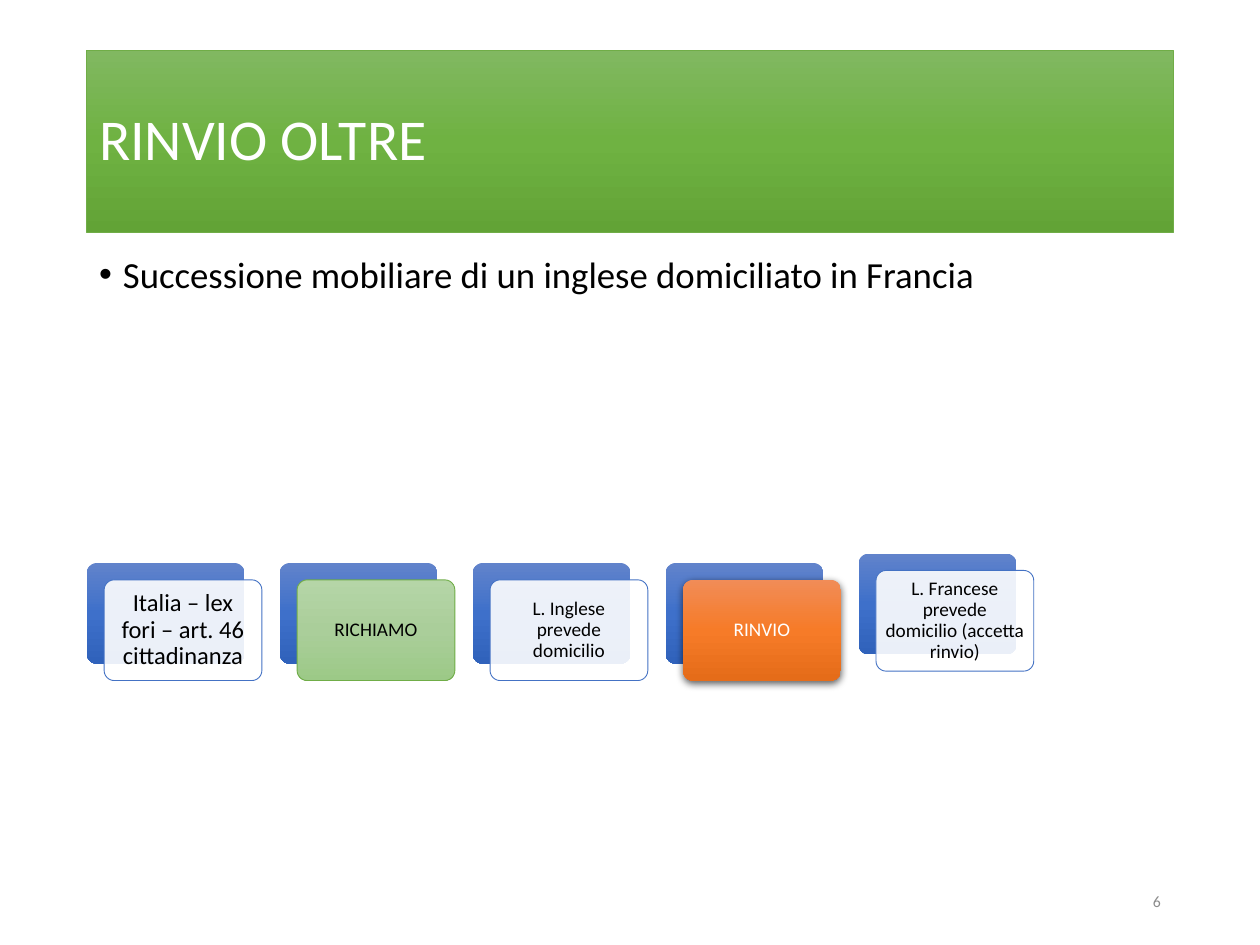
from lxml import etree
from pptx import Presentation
from pptx.dml.color import RGBColor
from pptx.enum import shapes, text
from pptx.oxml import parse_xml
from pptx.oxml.ns import nsdecls, qn
from pptx.util import Cm, Pt

GREEN = ("81B861", "6FB242", "62A336")
BLUE = ("6183CB", "3E70CA", "3062BB")
PALE_GREEN = ("B5D5A7", "AACE9A", "9CC987")
ORANGE = ("F18C57", "F67B28", "E56C19")
WHITE = ("FFFFFF",)

LEFT, TOP, PITCH = 1.75, 11.35, 3.89
CARD_WIDTH, CARD_HEIGHT = 3.18, 2.03
SHIFT_X, SHIFT_Y = 0.35, 0.34

# wording, text size, text colour, fill, outline, lift above the row
STEPS = [
    ("Italia – lex fori – art. 46 cittadinanza", 14, "000000", WHITE, "4472C4", 0),
    ("RICHIAMO", 11, "000000", PALE_GREEN, "70AD47", 0),
    ("L. Inglese prevede domicilio", 11, "000000", WHITE, "4472C4", 0),
    ("RINVIO", 11, "FFFFFF", ORANGE, None, 0),
    ("L. Francese prevede domicilio (accetta rinvio)", 11, "000000", WHITE, "4472C4", 0.19),
]


def color(value):
    return RGBColor.from_string(value)


def set_gradient(shape, colors):
    """Fill from top to bottom with evenly spaced colours."""
    shape.fill.gradient()
    shape.fill.gradient_angle = 270
    stops = shape.fill._fill._gradFill.find(qn("a:gsLst"))
    for stop in list(stops):
        stops.remove(stop)
    for index, value in enumerate(colors):
        position = index * 100000 // (len(colors) - 1)
        stop = etree.SubElement(stops, qn("a:gs"), pos=str(position))
        etree.SubElement(stop, qn("a:srgbClr"), val=value)


def set_translucent(shape, value, percent):
    shape.fill.solid()
    shape.fill.fore_color.rgb = color(value)
    target = shape._element.spPr.find(qn("a:solidFill"))[0]
    etree.SubElement(target, qn("a:alpha"), val=str(percent * 1000))


def add_shadow(shape):
    effects = shape._element.spPr.find(qn("a:effectLst"))
    effects.append(parse_xml(
        f'<a:outerShdw {nsdecls("a")} blurRad="57150" dist="19050" dir="5400000" '
        'algn="ctr" rotWithShape="0"><a:srgbClr val="000000">'
        '<a:alpha val="63000"/></a:srgbClr></a:outerShdw>'))


def add_panel(parent, kind, place, fill, outline=None):
    """Add a shape with one translucent colour or a gradient."""
    panel = parent.add_shape(kind, *map(Cm, place))
    panel.shadow.inherit = False
    if kind == shapes.MSO_SHAPE.ROUNDED_RECTANGLE:
        panel.adjustments[0] = 0.1
    if len(fill) == 1:
        set_translucent(panel, fill[0], 90)
    else:
        set_gradient(panel, fill)
    if outline:
        panel.line.color.rgb = color(outline)
        panel.line.width = Pt(0.5)
    else:
        panel.line.fill.background()
    return panel


def write(shape, wording, size, value, frame_format, para_format):
    frame = shape.text_frame
    for name, setting in {"word_wrap": True, **frame_format}.items():
        setattr(frame, name, setting)
    para = frame.paragraphs[0]
    for name, setting in para_format.items():
        setattr(para, name, setting)
    span = para.add_run()
    span.text = wording
    for name, setting in {"name": "Calibri", "size": Pt(size)}.items():
        setattr(span.font, name, setting)
    span.font.color.rgb = color(value)
    return para


def add_bullet(para, indent):
    properties = para._p.get_or_add_pPr()
    properties.set("marL", str(indent))
    properties.set("indent", str(-indent))
    etree.SubElement(properties, qn("a:buFont"), typeface="Arial")
    etree.SubElement(properties, qn("a:buChar"), char="•")


def add_step(parent, index, step):
    """Add a blue back plate and the labelled card in front of it."""
    wording, size, value, fill, outline, lift = step
    rounded = shapes.MSO_SHAPE.ROUNDED_RECTANGLE
    left, top = LEFT + index * PITCH, TOP - lift
    add_panel(parent, rounded, (left, top, CARD_WIDTH, CARD_HEIGHT), BLUE)
    card = add_panel(parent, rounded,
                     (left + SHIFT_X, top + SHIFT_Y, CARD_WIDTH, CARD_HEIGHT),
                     fill, outline)
    if fill == ORANGE:
        add_shadow(card)
    inset = Cm(0.15 if size > 11 else 0.13)
    sides = ("left", "top", "right", "bottom")
    write(card, wording, size, value,
          {"vertical_anchor": text.MSO_ANCHOR.MIDDLE,
           **{f"margin_{side}": inset for side in sides}},
          {"alignment": text.PP_ALIGN.CENTER, "line_spacing": 0.9})


def main():
    deck = Presentation()
    deck.slide_width, deck.slide_height = Cm(25.4), Cm(19.05)
    page = deck.slides.add_slide(deck.slide_layouts[6])
    middle = {"vertical_anchor": text.MSO_ANCHOR.MIDDLE}

    title = add_panel(page.shapes, shapes.MSO_SHAPE.RECTANGLE,
                      (LEFT, 1.01, 21.9, 3.68), GREEN, "70AD47")
    write(title, "RINVIO OLTRE", 33, "FFFFFF", middle,
          {"alignment": text.PP_ALIGN.LEFT, "line_spacing": 0.9})

    body = page.shapes.add_textbox(Cm(LEFT), Cm(5.05), Cm(22.38), Cm(1.45))
    para = write(body, "Successione mobiliare di un inglese domiciliato in Francia",
                 21, "000000", {}, {"line_spacing": 0.9, "space_before": Pt(7.5)})
    add_bullet(para, Cm(0.48))

    number = page.shapes.add_textbox(Cm(17.93), Cm(17.65), Cm(5.72), Cm(1.02))
    write(number, "6", 9, "8C8C8C", middle, {"alignment": text.PP_ALIGN.RIGHT})

    diagram = page.shapes.add_group_shape()
    for index, step in enumerate(STEPS):
        add_step(diagram.shapes, index, step)

    deck.save("out.pptx")


if __name__ == "__main__":
    main()
